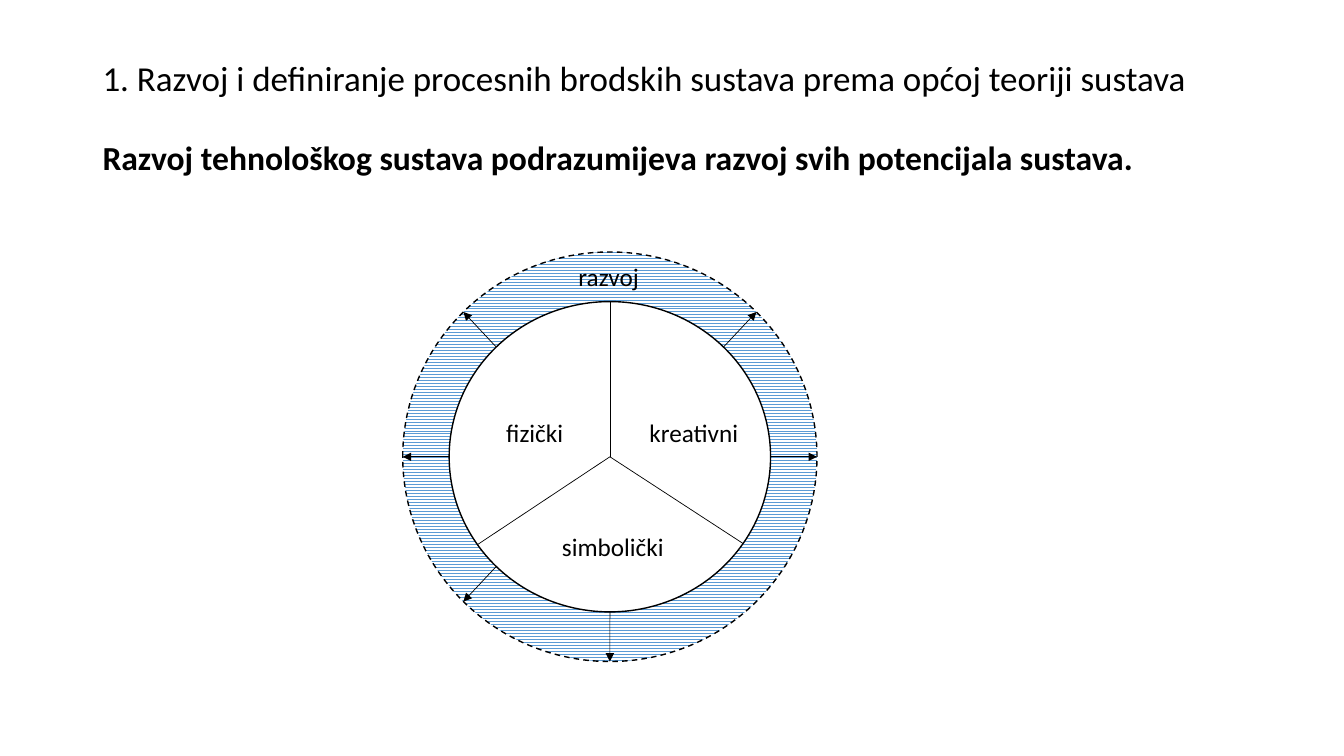
import math

import pptx
import pptx.dml.color
import pptx.enum.dml
import pptx.enum.shapes
import pptx.enum.text
import pptx.oxml
import pptx.oxml.ns
import pptx.util

Cm, Pt = pptx.util.Cm, pptx.util.Pt

# Content: text, left, top, width, height (cm), size
TITLE = ("1. Razvoj i definiranje procesnih brodskih sustava prema općoj teoriji sustava",
         2.33, 1.02, 29.21, 2.01, 25)
BODY = ("Razvoj tehnološkog sustava podrazumijeva razvoj svih potencijala sustava.",
        2.33, 3.43, 29.21, 13.74, 24)
LABELS = [
    ("fizički", 12.04, 10.29, 2.87, 1.22, 18),
    ("kreativni", 15.77, 10.29, 3.43, 1.22, 18),
    ("simbolički", 13.59, 13.28, 3.71, 0.99, 18),
    ("razvoj", 13.23, 6.22, 4.22, 1.5, 18),
]

# Rings: shared centre and radii (cm); angles in degrees, anticlockwise
MID = (15.37, 11.51)
HUB, INNER, OUTER = (0, 0), (4.05, 3.91), (5.22, 5.16)
SPOKES = [90, 214.5, 326]
ARROWS = [135, 45, 270, 0, 180, 225]
BLACK, WHITE, BLUE = "000000", "FFFFFF", "5B9BD5"


def color(code):
    return pptx.dml.color.RGBColor.from_string(code)


def node(tag, **attrs):
    item = pptx.oxml.parse_xml(f"<a:{tag} {pptx.oxml.ns.nsdecls('a')}/>")
    for key, value in attrs.items():
        item.set(key, value)
    return item


def write(shape, item, align, anchor, bold=False):
    """Place a text shape and fill it with one run."""
    text, left, top, width, height, size = item
    shape.left, shape.top = Cm(left), Cm(top)
    shape.width, shape.height = Cm(width), Cm(height)
    frame = shape.text_frame
    frame.word_wrap = True
    frame.auto_size = pptx.enum.text.MSO_AUTO_SIZE.NONE
    frame.vertical_anchor = anchor
    para = frame.paragraphs[0]
    para.alignment = align
    run = para.add_run()
    run.text = text
    run.font.name = "Calibri"
    run.font.size = Pt(size)
    run.font.bold = bold
    run.font.color.rgb = color(BLACK)
    return para


def ring(radii):
    """Draw an ellipse round the centre."""
    (x, y), (rx, ry) = MID, radii
    shape = slide.shapes.add_shape(pptx.enum.shapes.MSO_SHAPE.OVAL, Cm(x - rx), Cm(y - ry),
                                   Cm(2 * rx), Cm(2 * ry))
    shape.shadow.inherit = False
    shape.line.color.rgb = color(BLACK)
    shape.line.width = Pt(1)
    return shape


def spot(radii, angle):
    turn = math.radians(angle)
    return (Cm(MID[0] + radii[0] * math.cos(turn)),
            Cm(MID[1] - radii[1] * math.sin(turn)))


def ray(start, end, angle, head=False):
    """Draw a line outwards between two radii."""
    line = slide.shapes.add_connector(pptx.enum.shapes.MSO_CONNECTOR.STRAIGHT,
                                      *spot(start, angle), *spot(end, angle))
    line.line.color.rgb = color(BLACK)
    line.line.width = Pt(0.5)
    props = line.element.spPr
    if head:
        props.find(pptx.oxml.ns.qn("a:ln")).append(node("tailEnd", type="triangle"))
    props.append(node("effectLst"))


deck = pptx.Presentation()
deck.slide_width, deck.slide_height = Cm(33.87), Cm(19.05)
slide = deck.slides.add_slide(deck.slide_layouts[1])
ALIGN, ANCHOR = pptx.enum.text.PP_ALIGN, pptx.enum.text.MSO_ANCHOR

# Title and statement
para = write(slide.shapes.title, TITLE, ALIGN.LEFT, ANCHOR.MIDDLE)
para.line_spacing = 0.9
para = write(slide.placeholders[1], BODY, ALIGN.LEFT, ANCHOR.TOP, bold=True)
para.line_spacing = 0.9
para.space_before = Pt(10)
props = para._p.get_or_add_pPr()
props.set("marL", "0")
props.set("indent", "0")
props.append(node("buNone"))

# Hatched outer ring and white core
outer = ring(OUTER)
outer.fill.patterned()
outer.fill.pattern = pptx.enum.dml.MSO_PATTERN.ZIG_ZAG
outer.fill.fore_color.rgb = color(BLUE)
outer.fill.back_color.rgb = color(WHITE)
outer.line.dash_style = pptx.enum.dml.MSO_LINE.DASH
core = ring(INNER)
core.fill.solid()
core.fill.fore_color.rgb = color(WHITE)

# Sector borders and growth arrows
for angle in SPOKES:
    ray(HUB, INNER, angle)
for angle in ARROWS:
    ray(INNER, OUTER, angle, head=True)

# Labels
for label in LABELS:
    box = slide.shapes.add_textbox(0, 0, 0, 0)
    write(box, label, ALIGN.CENTER, ANCHOR.MIDDLE)

deck.save("out.pptx")
